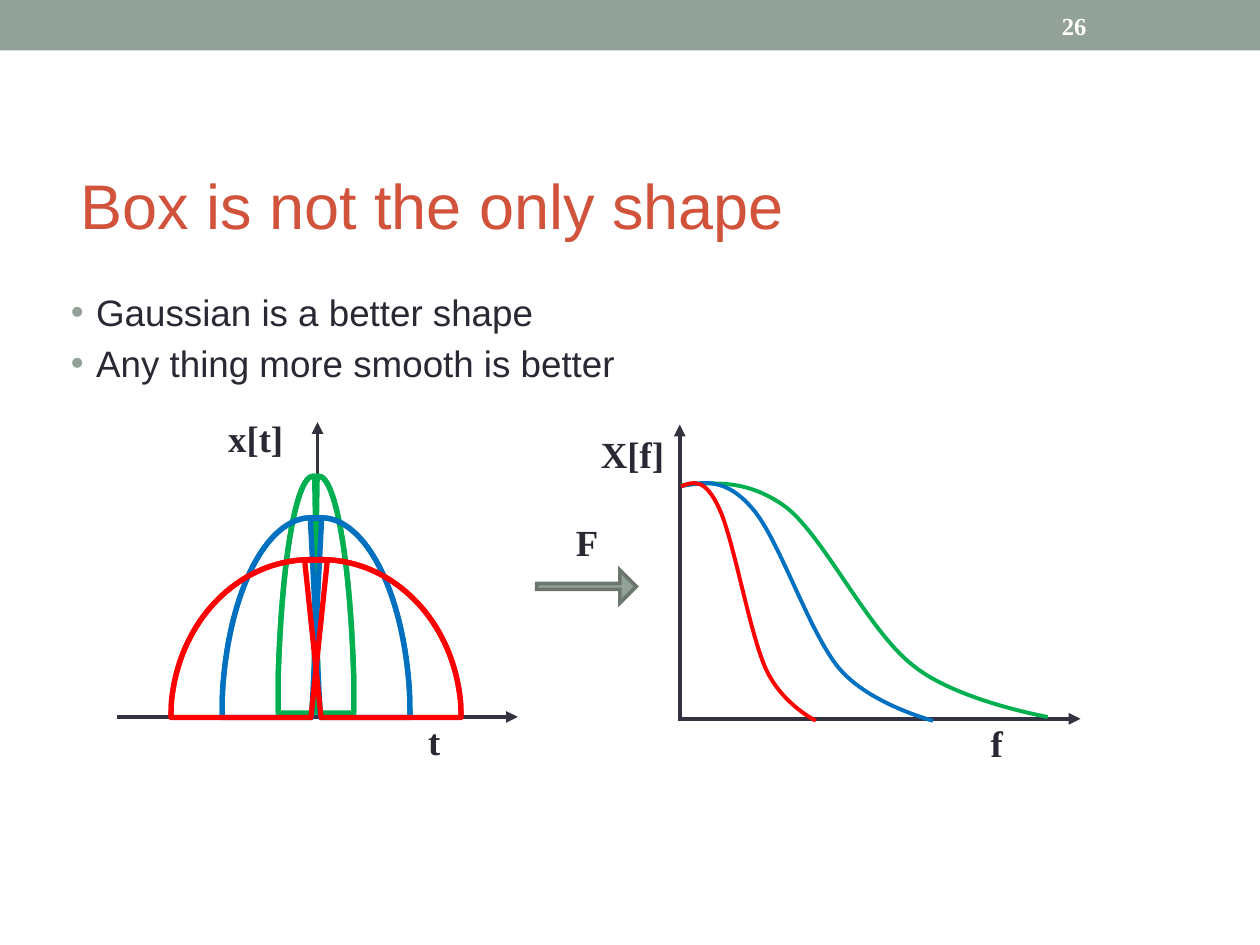
from lxml import etree
from pptx import Presentation, util as u
from pptx.dml.color import RGBColor
from pptx.enum import shapes, text
from pptx.oxml.ns import qn

SAGE = RGBColor(0x93, 0xA2, 0x99)
MOSS = RGBColor(0x6B, 0x76, 0x6F)
RUST = RGBColor(0xD2, 0x53, 0x3C)
INK = RGBColor(0x29, 0x29, 0x34)
SLATE = RGBColor(0x32, 0x32, 0x40)
WHITE = RGBColor(0xFF, 0xFF, 0xFF)
GREEN = RGBColor(0x00, 0xB0, 0x50)
BLUE = RGBColor(0x00, 0x70, 0xC0)
RED = RGBColor(0xFF, 0x00, 0x00)
SANS, SERIF = "Arial", "Times New Roman"
COLS, ROWS = 100, 75
BELLS = [
    (GREEN, 2.8, 4.3, 37.7,
     [(-0.1, 4.4), (1.4, 3.3), (2.7, 10.3), (3, 20.3),
      (3, 21.2), (3, 22.2), (3, 23.1)], (0.2, 23.1)),
    (BLUE, 7.1, 7.6, 31.8,
     [(-0.45, 7.7), (3.35, 6.7), (6.8, 12.6), (7.4, 21.1),
      (7.45, 21.9), (7.45, 22.7), (7.45, 23.45)], (0.35, 23.45)),
    (RED, 11.1, 10.9, 25.1,
     [(-0.9, 11), (5.1, 10.2), (10.5, 14.9), (11.4, 21.6),
      (11.5, 22.2), (11.5, 22.8), (11.5, 23.45)], (0.4, 23.45)),
]
WIDE = [(0, 4.8), (2.7, 4.6), (5.3, 4.3), (8.4, 6.6), (11.4, 9),
        (14.9, 16.4), (18.4, 19.1), (21.8, 21.9), (29.1, 23.2), (29.1, 23.2)]
STEEP = [(0, 4.9), (1.8, 4.5), (3.6, 4.2), (5.7, 6.7), (7.8, 9.1),
         (10.2, 16.6), (12.6, 19.4), (15, 22.2), (20, 23.5), (20, 23.5)]
FALLS = [(GREEN, WIDE, 29.1), (BLUE, STEEP, 20), (RED, STEEP, 10.7)]


def grid(*vals):
    return [u.Inches(val / 10) for val in vals]


def write(slide, box, lines, size, color, face=SANS, bold=False, mid=False):
    frame = slide.shapes.add_textbox(*grid(*box)).text_frame
    frame.word_wrap = True
    frame.margin_right = 0
    frame.vertical_anchor = text.MSO_ANCHOR.MIDDLE if mid else text.MSO_ANCHOR.TOP
    frame.text = "\n".join(lines)
    for para in frame.paragraphs:
        for run in para.runs:
            font = run.font
            font.name, font.size, font.bold = face, u.Pt(size), bold
            font.color.rgb = color
    return frame


def label(slide, left, top, width, word):
    write(slide, (left, top, width, 4.5), [word], 21, INK, SERIF, True)


def arrow(slide, start, end):
    line = slide.shapes.add_connector(
        shapes.MSO_CONNECTOR.STRAIGHT, *grid(*start, *end))
    line.line.color.rgb = SLATE
    line.line.width = u.Pt(2.25)
    etree.SubElement(line.line._get_or_add_ln(), qn("a:tailEnd"), type="triangle")
    etree.SubElement(line._element.spPr, qn("a:effectLst"))


def trace(parent, box, routes, color, weight):
    left, top, width, height = grid(*box)
    pen = parent.build_freeform(left, top, scale=1)
    pen.add_line_segments([(left + width, top + height)], close=False)
    curve = pen.convert_to_shape()
    curve.shadow.inherit = False
    curve.fill.background()
    curve.line.color.rgb = color
    curve.line.width = u.Pt(weight)
    tracks = curve._element.spPr.find(".//" + qn("a:pathLst"))
    tracks.clear()
    for knots, ends in routes:
        track = etree.SubElement(tracks, qn("a:path"), w=str(width), h=str(height))
        steps = [("a:moveTo", knots[:1])]
        steps += [("a:cubicBezTo", knots[i:i + 3]) for i in range(1, len(knots), 3)]
        steps += [("a:lnTo", [end]) for end in ends]
        for tag, points in steps:
            step = etree.SubElement(track, qn(tag))
            for point in points:
                x, y = grid(*point)
                etree.SubElement(step, qn("a:pt"), x=str(x - left), y=str(y - top))
        if ends:
            etree.SubElement(track, qn("a:close"))


def header(slide, box):
    left, top, width, height = box
    band = slide.shapes.add_shape(shapes.MSO_SHAPE.RECTANGLE, *grid(*box))
    band.shadow.inherit = False
    band.fill.solid()
    band.fill.fore_color.rgb = SAGE
    band.line.fill.background()
    write(slide, (left + width * 0.833, top + 0.25, 11.7, height - 0.4),
          ["26"], 14, WHITE, SERIF, True, True)


def bullets(slide, box, lines):
    frame = write(slide, box, lines, 21, INK)
    for count, para in enumerate(frame.paragraphs):
        para.space_before = u.Pt(4.2 if count else 0)
        props = para._p.get_or_add_pPr()
        props.set("marL", str(u.Inches(0.2)))
        props.set("indent", str(-u.Inches(0.2)))
        tint = etree.SubElement(props, qn("a:buClr"))
        etree.SubElement(tint, qn("a:srgbClr"), val=str(SAGE))
        etree.SubElement(props, qn("a:buFont"), typeface=SANS)
        etree.SubElement(props, qn("a:buChar"), char="•")


def axes(slide, box, cross, drop, name):
    left, top, width, height = box
    base = top + height
    arrow(slide, (cross, base + drop), (cross, top))
    arrow(slide, (left, base), (left + width, base))
    label(slide, left + 23.7, base - 0.35, 3, name)


def bell(slide, mid, top, color, wide, peak, high, knots, foot):
    group = slide.shapes.add_group_shape()
    for side in (1, -1):
        arc = [(mid + side * x, top + y) for x, y in knots]
        end = (mid + side * foot[0], top + foot[1])
        box = (end[0] - wide, top + peak, 2 * wide, high)
        trace(group.shapes, box, [(arc, [end, arc[0]]), (arc, [])], color, 3)


def pulses(slide, box):
    left, top, width, height = box
    mid = left + width / 2
    axes(slide, box, mid, 0, "t")
    for shape in BELLS:
        bell(slide, mid - 0.12, top, *shape)
    label(slide, left + 7.83, top - 1, 6.4, "x[t]")


def link(slide, box):
    left, top, width, height = box
    mark = slide.shapes.add_shape(
        shapes.MSO_SHAPE.RIGHT_ARROW,
        *grid(left, top + height - 2.6, width, 2.6))
    mark.adjustments[0], mark.adjustments[1] = 0.18, 0.5
    mark.shadow.inherit = False
    mark.fill.solid()
    mark.fill.fore_color.rgb = SAGE
    mark.line.color.rgb = MOSS
    mark.line.width = u.Pt(2.08)
    etree.SubElement(mark.line._get_or_add_ln(), qn("a:miter"), lim="800000")
    label(slide, left + 2.13, top, 3.8, "F")


def spectra(slide, box):
    left, top, width, height = box
    axes(slide, box, left, 0.2, "f")
    label(slide, left - 7.25, top + 0.1, 7.1, "X[f]")
    for color, knots, span in FALLS:
        scale = span / knots[-1][0]
        placed = [(left + 0.1 + x * scale, top + y) for x, y in knots]
        frame = (left + 0.1, top + 4.7, span, knots[-1][1] - 4.7)
        trace(slide.shapes, frame, [(placed, [])], color, 2.25)


def main():
    deck = Presentation()
    deck.slide_width, deck.slide_height = grid(COLS, ROWS)
    slide = deck.slides.add_slide(deck.slide_layouts[6])
    header(slide, (0, 0, COLS, 4))
    write(slide, (5.4, 12.4, 82.6, 7.6), ["Box is not the only shape"],
          36, RUST, mid=True)
    bullets(slide, (4.65, 22.5, 83.1, 37.6),
            ["Gaussian is a better shape", "Any thing more smooth is better"])
    pulses(slide, (9.3, 33.5, 31.8, 23.4))
    link(slide, (42.6, 40.75, 7.9, 7.1))
    spectra(slide, (53.95, 33.7, 31.8, 23.35))
    deck.save("out.pptx")


if __name__ == "__main__":
    main()
